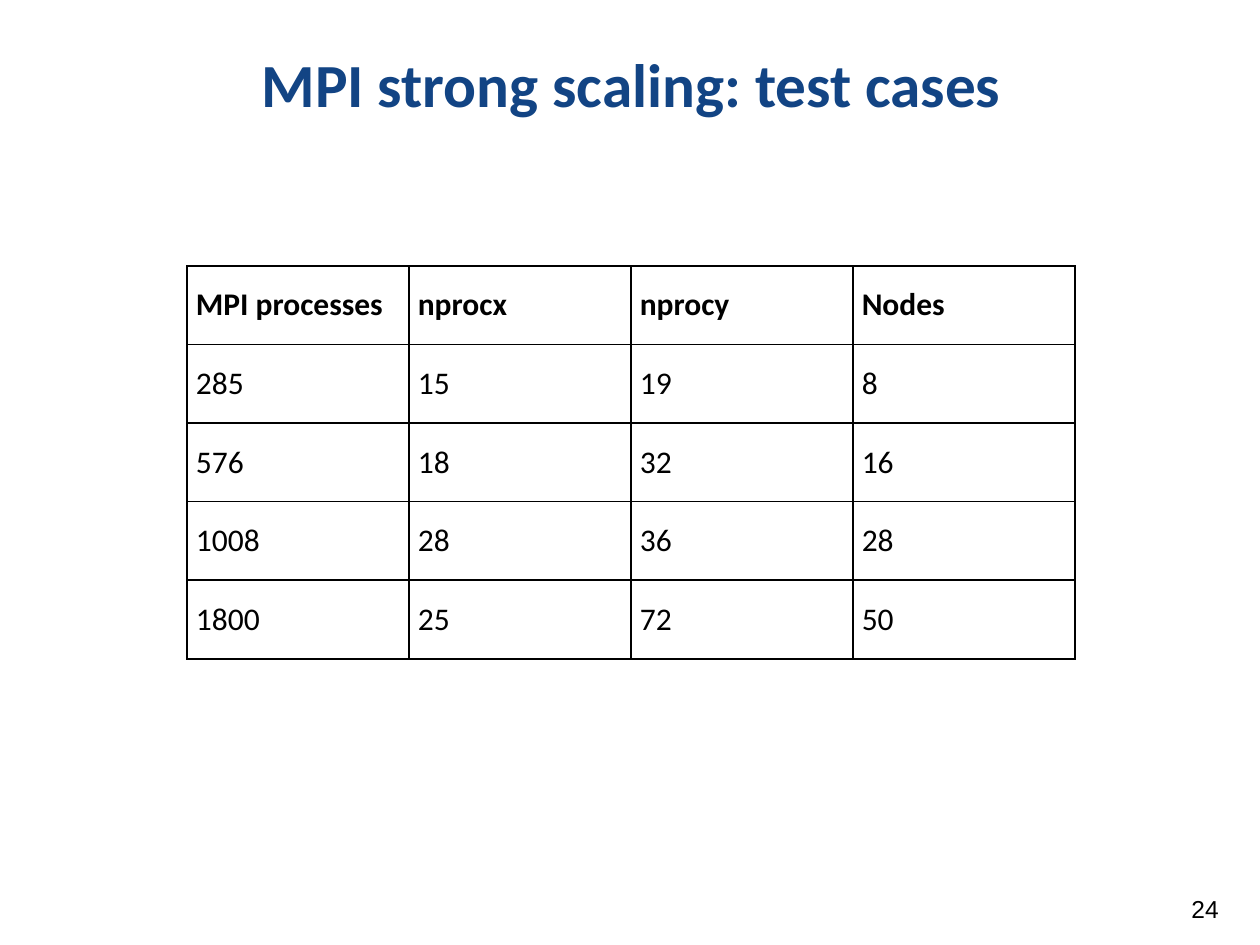
from dataclasses import dataclass

from lxml import etree
from pptx import Presentation
from pptx import util as u
from pptx.dml.color import RGBColor
from pptx.enum import text
from pptx.oxml import ns


@dataclass(frozen=True)
class Theme:
    title_color: RGBColor = RGBColor(0x12, 0x44, 0x84)
    ink: RGBColor = RGBColor(0, 0, 0)
    heading_font: str = "Calibri"
    number_font: str = "Arial"
    title_size: int = 35
    table_size: int = 18
    number_size: int = 14
    border_width: float = 1


THEME = Theme()

TEST_CASES = [
    ("MPI processes", "nprocx", "nprocy", "Nodes"),
    ("285", "15", "19", "8"),
    ("576", "18", "32", "16"),
    ("1008", "28", "36", "28"),
    ("1800", "25", "72", "50"),
]


def style_font(font, name, size, color, bold=False):
    font.name = name
    font.size = u.Pt(size)
    font.color.rgb = color
    font.bold = bold


def set_margins(target, horizontal, vertical):
    target.margin_left = target.margin_right = horizontal
    target.margin_top = target.margin_bottom = vertical


def add_title(slide, box, wording):
    title = slide.shapes.title
    title.left, title.top, title.width, title.height = box
    frame = title.text_frame
    frame.text = wording
    frame.word_wrap = True
    frame.auto_size = text.MSO_AUTO_SIZE.NONE
    frame.vertical_anchor = text.MSO_ANCHOR.MIDDLE
    set_margins(frame, u.Cm(0.25), u.Cm(0.13))
    paragraph = frame.paragraphs[0]
    paragraph.alignment = text.PP_ALIGN.CENTER
    paragraph.line_spacing = 0.9
    style_font(paragraph.font, THEME.heading_font, THEME.title_size,
               THEME.title_color, bold=True)


def add_page_number(slide, box, number):
    frame = slide.shapes.add_textbox(*box).text_frame
    frame.text = number
    frame.word_wrap = True
    frame.vertical_anchor = text.MSO_ANCHOR.MIDDLE
    set_margins(frame, u.Cm(0.25), u.Cm(0.25))
    style_font(frame.paragraphs[0].font, THEME.number_font,
               THEME.number_size, THEME.ink)


def add_borders(cell):
    """Draw a solid line on all four sides; lines precede the fill in tcPr."""
    properties = cell._tc.get_or_add_tcPr()
    for position, side in enumerate(("lnL", "lnR", "lnT", "lnB")):
        line = etree.Element(ns.qn(f"a:{side}"), w=str(u.Pt(THEME.border_width)))
        fill = etree.SubElement(line, ns.qn("a:solidFill"))
        etree.SubElement(fill, ns.qn("a:srgbClr"), val=str(THEME.ink))
        properties.insert(position, line)


def add_case_table(slide, box, rows):
    left, top, width, height = box
    table = slide.shapes.add_table(len(rows), len(rows[0]), *box).table
    table.horz_banding = False
    for column in table.columns:
        column.width = width // len(rows[0])
    for row in table.rows:
        row.height = height // len(rows)
    for row_index, values in enumerate(rows):
        for column_index, value in enumerate(values):
            cell = table.cell(row_index, column_index)
            cell.text = value
            cell.vertical_anchor = text.MSO_ANCHOR.MIDDLE
            set_margins(cell, u.Cm(0.18), u.Cm(0.18))
            cell.fill.background()
            add_borders(cell)
            style_font(cell.text_frame.paragraphs[0].font, THEME.heading_font,
                       THEME.table_size, THEME.ink, bold=row_index == 0)


def main():
    presentation = Presentation()
    presentation.slide_width = u.Cm(25.4)
    presentation.slide_height = u.Cm(19.05)
    title_only = presentation.slide_layouts[5]
    slide = presentation.slides.add_slide(title_only)

    add_title(slide, (u.Cm(1.3), u.Cm(0.6), u.Cm(22.86), u.Cm(2.34)),
              "MPI strong scaling: test cases")
    add_page_number(slide, (u.Cm(23.77), u.Cm(17.6), u.Cm(1.52), u.Cm(1.45)), "24")
    add_case_table(slide, (u.Cm(3.77), u.Cm(5.36), u.Cm(17.9), u.Cm(7.92)),
                   TEST_CASES)
    presentation.save("out.pptx")


if __name__ == "__main__":
    main()
